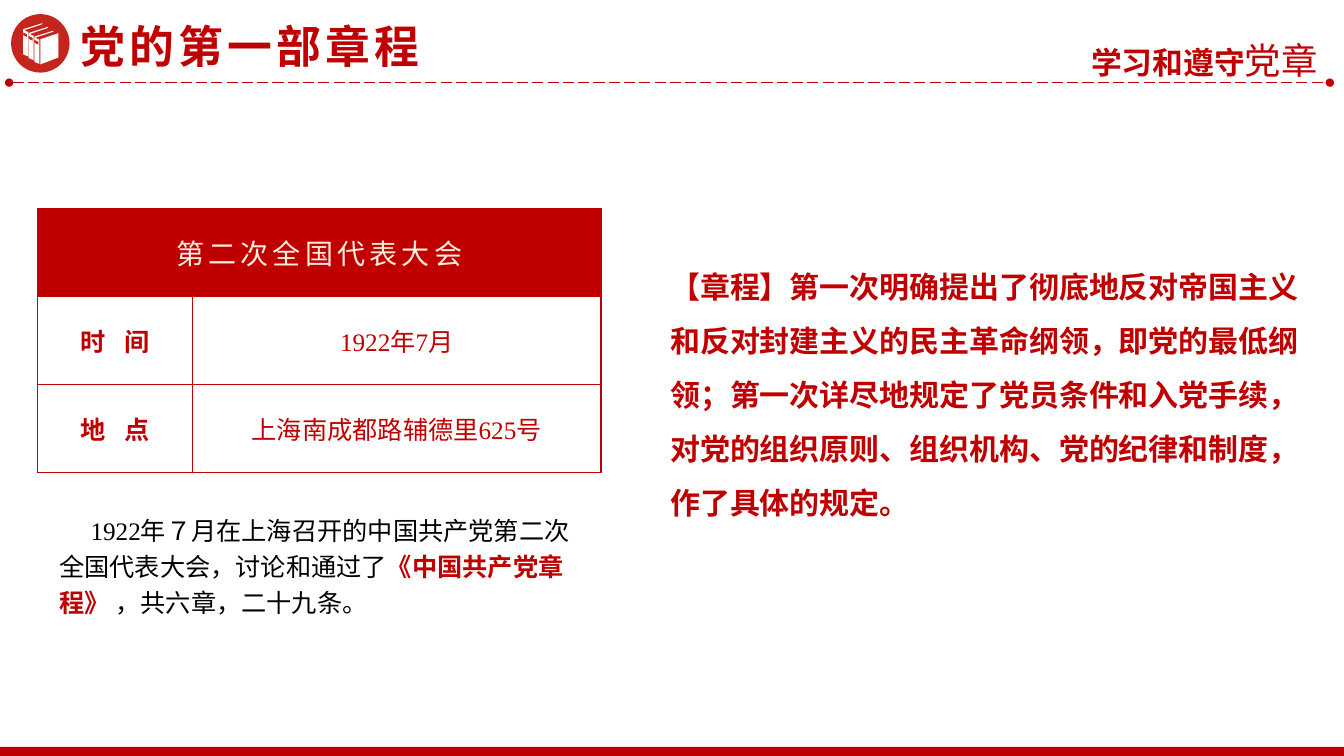
"""Build a slide on the first party constitution."""
from lxml import etree
from pptx import Presentation
from pptx import util as u
from pptx.dml import color
from pptx.enum import dml, shapes, text
from pptx.oxml import ns

COLORS = {"red": "C00000", "badge": "C4261D", "cream": "FEEEDE", "black": "000000", "white": "FFFFFF"}
SERIF, SANS = "Times New Roman", "Noto Sans CJK SC"


def rgb(name):
    """Return the named palette colour."""
    return color.RGBColor.from_string(COLORS[name])


def format_run(r, size, fill="red", bold=False, font=SERIF, spacing=0):
    """Apply the character format to a run."""
    r.font.size = u.Pt(size)
    r.font.bold = bold
    r.font.color.rgb = rgb(fill)
    r.font.name = font
    rPr = r.font._element
    rPr.set("spc", str(int(spacing * 100)))
    etree.SubElement(rPr, ns.qn("a:ea")).set("typeface", SANS)


def add_text(s, box, runs, wrap=True, align=text.PP_ALIGN.LEFT, leading=1.0, indent=0):
    """Add a one-paragraph text box from pairs of wording and format."""
    sp = s.shapes.add_textbox(*map(u.Inches, box))
    tf = sp.text_frame
    tf.word_wrap = wrap
    tf.auto_size = text.MSO_AUTO_SIZE.SHAPE_TO_FIT_TEXT
    p = tf.paragraphs[0]
    p.alignment = align
    p.line_spacing = leading
    if indent:
        p._p.get_or_add_pPr().set("indent", str(u.Inches(indent)))
    for words, style in runs:
        r = p.add_run()
        r.text = words
        format_run(r, **style)


def paint(sp, fill):
    """Give a shape a plain fill with no line or shadow."""
    sp.shadow.inherit = False
    sp.fill.solid()
    sp.fill.fore_color.rgb = rgb(fill)
    sp.line.fill.background()


def add_badge(s, left, top, size):
    """Draw the round badge with three books."""
    disc = s.shapes.add_shape(shapes.MSO_SHAPE.OVAL, *map(u.Inches, (left, top, size, size)))
    paint(disc, "badge")
    spine = [(0.31, 0.09), (0.12, 0.15), (0.12, 0.4), (0.17, 0.42), (0.17, 0.18), (0.13, 0.16), (0.31, 0.1)]
    label = [(0.12, 0.18), (0.16, 0.2), (0.16, 0.23), (0.12, 0.21)]
    cover = [(0.29, 0.25), (0.29, 0.5), (0.47, 0.43), (0.47, 0.19)]
    outlines = [cover] + [[(x + 0.055 * i, y + 0.037 * i) for x, y in part]
                          for i in range(3) for part in (spine, label)]
    builder = None
    for outline in outlines:
        points = [(u.Inches(left + x), u.Inches(top + y)) for x, y in outline]
        if builder is None:
            builder = s.shapes.build_freeform(*points[0])
        else:
            builder.move_to(*points[0])
        builder.add_line_segments(points[1:], close=True)
    paint(builder.convert_to_shape(), "white")


def add_header(s, left, top, width):
    """Place the dashed rule, badge, title and section name."""
    rule_y = u.Inches(top + 0.82)
    rule = s.shapes.add_connector(shapes.MSO_CONNECTOR.STRAIGHT, u.Inches(left + 0.09), rule_y,
                                  u.Inches(left + width - 0.14), rule_y)
    rule.line.color.rgb = rgb("red")
    rule.line.width = u.Pt(1)
    rule.line.dash_style = dml.MSO_LINE.LONG_DASH
    ln = rule.line._get_or_add_ln()
    for end in ("headEnd", "tailEnd"):
        etree.SubElement(ln, ns.qn(f"a:{end}")).set("type", "oval")
    etree.SubElement(rule._element.spPr, ns.qn("a:effectLst"))
    add_badge(s, left + 0.11, top + 0.14, 0.58)
    add_text(s, (left + 0.7, top + 0.14, 3.64, 0.64),
             [("党的第一部章程", dict(size=32, bold=True, spacing=3))], wrap=False)
    add_text(s, (left + width - 2.73, top + 0.33, 2.57, 0.54),
             [("学习和遵守", dict(size=22, bold=True, font=SANS)), ("党章", dict(size=26, font=SANS))],
             wrap=False, align=text.PP_ALIGN.RIGHT)


def add_footer(s, left, top, width, height):
    """Place the red bar at the foot of the slide."""
    bar = s.shapes.add_shape(shapes.MSO_SHAPE.RECTANGLE, *map(u.Inches, (left, top, width, height)))
    paint(bar, "red")


def set_borders(cell):
    """Draw thin red lines on all sides of a cell."""
    tcPr = cell._tc.get_or_add_tcPr()
    for side in "LRTB":
        ln = etree.SubElement(tcPr, ns.qn(f"a:ln{side}"), w=str(u.Pt(1)))
        fill = etree.SubElement(ln, ns.qn("a:solidFill"))
        etree.SubElement(fill, ns.qn("a:srgbClr"), val=COLORS["red"])


def add_congress_table(s, left, top, width, height):
    """Place the table of the congress date and venue."""
    rows = [("第二次全国代表大会", ""), ("时 间", "1922年7月"), ("地 点", "上海南成都路辅德里625号")]
    table = s.shapes.add_table(3, 2, *map(u.Inches, (left, top, width, height))).table
    table.columns[0].width = u.Inches(1.54)
    table.columns[1].width = u.Inches(width - 1.54)
    heading = dict(size=20, fill="cream", spacing=3)
    styles = (dict(size=18, bold=True, spacing=4.5), dict(size=18))
    for i, row in enumerate(rows):
        for j, words in enumerate(row):
            cell = table.cell(i, j)
            set_borders(cell)
            if i == 0:
                cell.fill.solid()
                cell.fill.fore_color.rgb = rgb("red")
            else:
                cell.fill.background()
            cell.vertical_anchor = text.MSO_ANCHOR.MIDDLE
            p = cell.text_frame.paragraphs[0]
            p.text = words
            p.alignment = text.PP_ALIGN.CENTER
            for r in p.runs:
                format_run(r, **(heading if i == 0 else styles[j]))
    table.cell(0, 0).merge(table.cell(0, 1))


def add_summary(s, box):
    """Place the note on the adoption of the constitution."""
    plain = dict(size=18, fill="black")
    add_text(s, box, [
        ("1922年７月在上海召开的中国共产党第二次全国代表大会，讨论和通过了", plain),
        ("《中国共产党章程》 ", dict(size=18, bold=True)),
        ("，共六章，二十九条。", plain),
    ], leading=1.2, indent=0.31)


def add_significance(s, box):
    """Place the statement of what the constitution set out."""
    words = ("【章程】第一次明确提出了彻底地反对帝国主义和反对封建主义的民主革命纲领，即党的最低纲领；"
             "第一次详尽地规定了党员条件和入党手续，对党的组织原则、组织机构、党的纪律和制度，作了具体的规定。")
    add_text(s, box, [(words, dict(size=21.4, bold=True))], leading=1.5)


def main():
    """Build and save the presentation."""
    prs = Presentation()
    prs.slide_width, prs.slide_height = u.Inches(13.33), u.Inches(7.5)
    s = prs.slides.add_slide(prs.slide_layouts[6])
    add_header(s, 0, 0, 13.33)
    add_footer(s, 0, 7.41, 13.33, 0.09)
    add_summary(s, (0.49, 5, 5.47, 1.19))
    add_significance(s, (6.55, 2.44, 6.6, 2.73))
    add_congress_table(s, 0.37, 2.07, 5.59, 2.62)
    prs.save("out.pptx")


if __name__ == "__main__":
    main()
